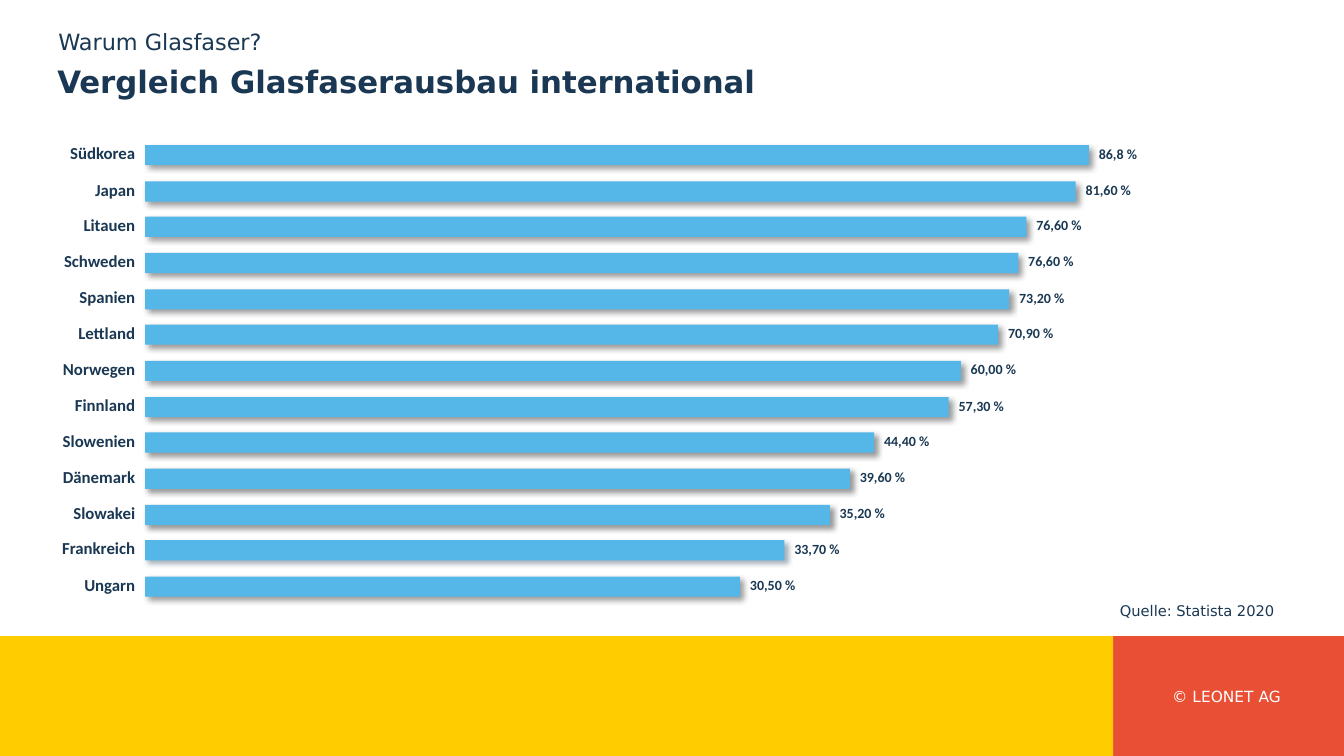
import lxml.etree
import pptx
import pptx.dml.color
import pptx.enum.shapes
import pptx.enum.text
import pptx.oxml.ns
import pptx.util

PX = 9144
COLORS = {
    "navy": "1A3853",
    "blue": "55B7E8",
    "yellow": "FFCC00",
    "red": "E94F34",
    "white": "FFFFFF",
    "black": "000000",
}
ALIGN = pptx.enum.text.PP_ALIGN
ANCHOR = pptx.enum.text.MSO_ANCHOR
BAR_LEFT, BAR_TOP, BAR_HEIGHT, BAR_SPAN = 144, 144, 20, 428
LABEL_WIDTH, VALUE_WIDTH = 103, 70
COUNTRIES = [
    ("Südkorea", "86,8 %", 936, "black"),
    ("Japan", "81,60 %", 923, "black"),
    ("Litauen", "76,60 %", 874, "black"),
    ("Schweden", "76,60 %", 866, "black"),
    ("Spanien", "73,20 %", 857, "black"),
    ("Lettland", "70,90 %", 846, "black"),
    ("Norwegen", "60,00 %", 809, "black"),
    ("Finnland", "57,30 %", 797, "black"),
    ("Slowenien", "44,40 %", 723, "black"),
    ("Dänemark", "39,60 %", 699, "black"),
    ("Slowakei", "35,20 %", 679, "black"),
    ("Frankreich", "33,70 %", 634, "navy"),
    ("Ungarn", "30,50 %", 590, "black"),
]


def px(*lengths):
    return [pptx.util.Emu(n * PX) for n in lengths]


def rgb(color):
    return pptx.dml.color.RGBColor.from_string(COLORS[color])


def add_rect(s, box, color):
    sp = s.shapes.add_shape(pptx.enum.shapes.MSO_SHAPE.RECTANGLE, *px(*box))
    sp.shadow.inherit = False
    sp.fill.solid()
    sp.fill.fore_color.rgb = rgb(color)
    sp.line.fill.background()
    return sp


def add_shadow(sp, color):
    qn = pptx.oxml.ns.qn
    effects = sp.element.spPr.find(qn("a:effectLst"))
    shadow = lxml.etree.SubElement(
        effects, qn("a:outerShdw"), blurRad="50800", dist="38100",
        dir="2700000", algn="tl", rotWithShape="0")
    clr = lxml.etree.SubElement(shadow, qn("a:srgbClr"), val=COLORS[color])
    lxml.etree.SubElement(clr, qn("a:alpha"), val="40000")


def add_text(s, box, text, size, font="DejaVu Sans", color="navy", bold=False,
             align=ALIGN.LEFT, anchor=ANCHOR.TOP, spacing=None):
    tf = s.shapes.add_textbox(*px(*box)).text_frame
    tf.word_wrap = True
    tf.vertical_anchor = anchor
    p = tf.paragraphs[0]
    p.alignment = align
    p.line_spacing = spacing
    r = p.add_run()
    r.text = text
    r.font.name = font
    r.font.size = pptx.util.Pt(size)
    r.font.bold = bold
    r.font.color.rgb = rgb(color)


def add_bar_row(s, top, country, value, width, shadow):
    add_text(s, (BAR_LEFT - LABEL_WIDTH, top - 7, LABEL_WIDTH, 30), country, 12,
             font="Calibri", bold=True, align=ALIGN.RIGHT)
    add_shadow(add_rect(s, (BAR_LEFT, top, width, BAR_HEIGHT), "blue"), shadow)
    add_text(s, (BAR_LEFT + width, top - 5, VALUE_WIDTH, 27), value, 10,
             font="Calibri", bold=True)


def add_footer(s):
    add_rect(s, (1104, 631, 229, 119), "red")
    add_rect(s, (0, 631, 1104, 119), "yellow")
    add_text(s, (1151, 677, 131, 29), "© LEONET AG", 11, color="white",
             align=ALIGN.CENTER)


def main():
    prs = pptx.Presentation()
    prs.slide_width, prs.slide_height = px(1333, 750)
    s = prs.slides.add_slide(prs.slide_layouts[6])
    add_footer(s)
    add_text(s, (48, 23, 998, 47), "Warum Glasfaser?", 16)
    add_text(s, (47, 57, 1150, 51), "Vergleich Glasfaserausbau international",
             22, bold=True, anchor=ANCHOR.MIDDLE, spacing=0.9)
    for i, row in enumerate(COUNTRIES):
        top = BAR_TOP + round(i * BAR_SPAN / (len(COUNTRIES) - 1))
        add_bar_row(s, top, *row)
    add_text(s, (1101, 594, 218, 21), "Quelle: Statista 2020", 10.5, spacing=0.9)
    prs.save("out.pptx")


if __name__ == "__main__":
    main()
